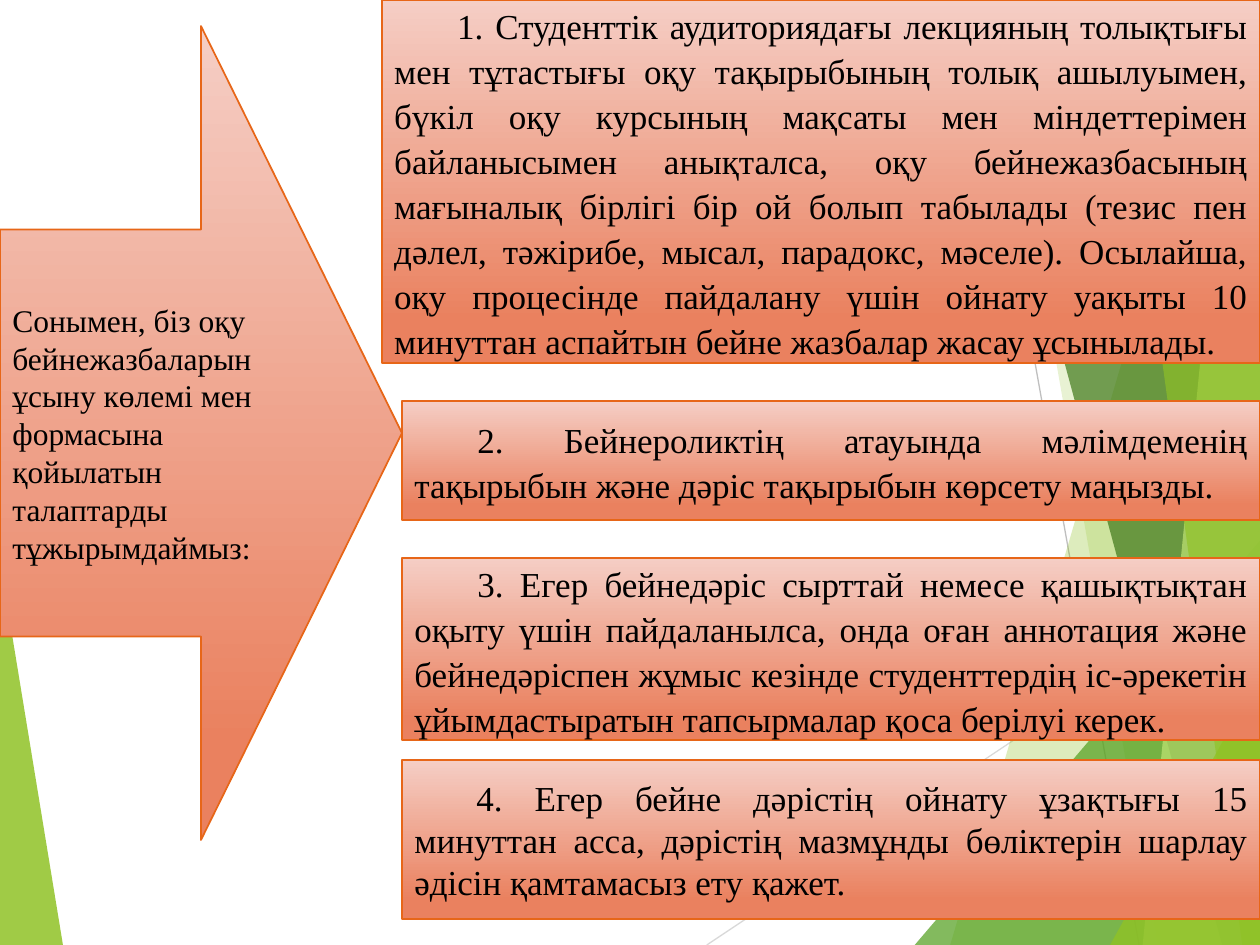
"""Build a slide where an arrow leads to four boxed requirements for teaching videos."""
from dataclasses import dataclass

from lxml.etree import SubElement
from pptx import Presentation
from pptx.dml.color import RGBColor as Rgb
from pptx.enum.shapes import MSO_CONNECTOR as Conn, MSO_SHAPE as Kind
from pptx.enum.text import MSO_ANCHOR as Anchor, PP_ALIGN as Align
from pptx.oxml.ns import qn
from pptx.util import Pt

WIDE, HIGH = 720, 540
FONT = "Times New Roman"


@dataclass
class Facet:
    points: list[tuple[float, float]]
    tint: str
    alpha: int


@dataclass
class Ray:
    start: tuple[float, float]
    end: tuple[float, float]
    tint: str


@dataclass
class Panel:
    left: float
    top: float
    width: float
    height: float
    text: str
    kind: Kind = Kind.RECTANGLE
    size: int = 20
    indent: float = 36
    lead: float = 1.07


LEAF = Facet([(0, 320.5), (36, HIGH), (0, HIGH)], "90C226", 85)
RAYS = [
    Ray((403.9, HIGH), (WIDE, 329), "D9D9D9"),
    Ray((554.4, 0), (650.9, HIGH), "BFBFBF"),
]
FACETS = [
    Facet([(702, 0), (543, HIGH), (WIDE, HIGH), (WIDE, 0)], "90C226", 30),
    Facet([(567.4, 0), (661.7, HIGH), (WIDE, HIGH), (WIDE, 0)], "90C226", 20),
    Facet([(522.7, HIGH), (WIDE, 308.9), (WIDE, HIGH)], "54A021", 72),
    Facet([(552.2, 0), (698.4, HIGH), (WIDE, HIGH), (WIDE, 0)], "3F7819", 70),
    Facet([(706.3, 0), (653, HIGH), (WIDE, HIGH), (WIDE, 0)], "C0E474", 70),
    Facet([(635.8, 0), (709.9, HIGH), (WIDE, HIGH), (WIDE, 0)], "90C226", 65),
    Facet([(634.3, HIGH), (WIDE, 385.2), (WIDE, HIGH)], "90C226", 80),
]
PANELS = [
    Panel(0, 14.9, 229.7, 465.1,
          "Сонымен, біз оқу бейнежазбаларын ұсыну көлемі мен формасына "
          "қойылатын талаптарды тұжырымдаймыз:",
          Kind.RIGHT_ARROW, 18, 0, 1),
    Panel(218.2, 0, 501.8, 207.4,
          "1. Студенттік аудиториядағы лекцияның толықтығы мен тұтастығы оқу "
          "тақырыбының толық ашылуымен, бүкіл оқу курсының мақсаты мен "
          "міндеттерімен байланысымен анықталса, оқу бейнежазбасының мағыналық "
          "бірлігі бір ой болып табылады (тезис пен дәлел, тәжірибе, мысал, "
          "парадокс, мәселе). Осылайша, оқу процесінде пайдалану үшін ойнату "
          "уақыты 10 минуттан аспайтын бейне жазбалар жасау ұсынылады."),
    Panel(229.7, 229, 490.3, 68,
          "2. Бейнероликтің атауында мәлімдеменің тақырыбын және дәріс "
          "тақырыбын көрсету маңызды."),
    Panel(229.7, 318.9, 490.3, 104.2,
          "3. Егер бейнедәріс сырттай немесе қашықтықтан оқыту үшін "
          "пайдаланылса, онда оған аннотация және бейнедәріспен жұмыс кезінде "
          "студенттердің іс-әрекетін ұйымдастыратын тапсырмалар қоса берілуі "
          "керек."),
    Panel(229.7, 434.3, 490.3, 90.9,
          "4. Егер бейне дәрістің ойнату ұзақтығы 15 минуттан асса, дәрістің "
          "мазмұнды бөліктерін шарлау әдісін қамтамасыз ету қажет.",
          indent=35.4, lead=1),
]


def paint(color, tint: str) -> None:
    """Set a colour from a hex string."""
    color.rgb = Rgb.from_string(tint)


def draw_facet(shapes, facet: Facet) -> None:
    """Draw a translucent polygon without an outline."""
    first, *rest = [(Pt(x), Pt(y)) for x, y in facet.points]
    pen = shapes.build_freeform(*first)
    pen.add_line_segments(rest)
    shape = pen.convert_to_shape()
    shape.shadow.inherit = False
    shape.line.fill.background()
    shape.fill.solid()
    paint(shape.fill.fore_color, facet.tint)
    color = next(shape.element.spPr.iter(qn("a:srgbClr")))
    SubElement(color, qn("a:alpha"), val=str(facet.alpha * 1000))


def draw_ray(shapes, ray: Ray) -> None:
    """Draw a thin straight line."""
    ends = [Pt(n) for n in ray.start + ray.end]
    line = shapes.add_connector(Conn.STRAIGHT, *ends)
    line.line.width = Pt(0.75)
    paint(line.line.color, ray.tint)
    SubElement(line.element.spPr, qn("a:effectLst"))


def draw_panel(shapes, panel: Panel) -> None:
    """Draw an outlined gradient shape with its text."""
    place = (panel.left, panel.top, panel.width, panel.height)
    shape = shapes.add_shape(panel.kind, *map(Pt, place))
    shape.shadow.inherit = False
    shape.line.width = Pt(1)
    paint(shape.line.color, "E76618")
    shape.fill.gradient()
    shape.fill.gradient_angle = 270
    looks = [(0, "F5CEC5"), (0.88, "EA815F")]
    for stop, (spot, tint) in zip(shape.fill.gradient_stops, looks):
        stop.position = spot
        paint(stop.color, tint)

    frame = shape.text_frame
    frame.word_wrap = True
    frame.vertical_anchor = Anchor.MIDDLE
    para = frame.paragraphs[0]
    para.alignment = Align.JUSTIFY if panel.indent else Align.LEFT
    para.line_spacing = panel.lead
    para.space_after = Pt(8 if panel.indent else 0)
    para._p.get_or_add_pPr().set("indent", str(Pt(panel.indent)))
    run = para.add_run()
    run.text = panel.text
    run.font.name = FONT
    run.font.size = Pt(panel.size)
    paint(run.font.color, "000000")


def main() -> None:
    """Assemble and save the slide."""
    deck = Presentation()
    deck.slide_width, deck.slide_height = Pt(WIDE), Pt(HIGH)
    shapes = deck.slides.add_slide(deck.slide_layouts[6]).shapes
    draw_facet(shapes, LEAF)
    for ray in RAYS:
        draw_ray(shapes, ray)
    for facet in FACETS:
        draw_facet(shapes, facet)
    for panel in PANELS:
        draw_panel(shapes, panel)
    deck.save("out.pptx")


if __name__ == "__main__":
    main()
